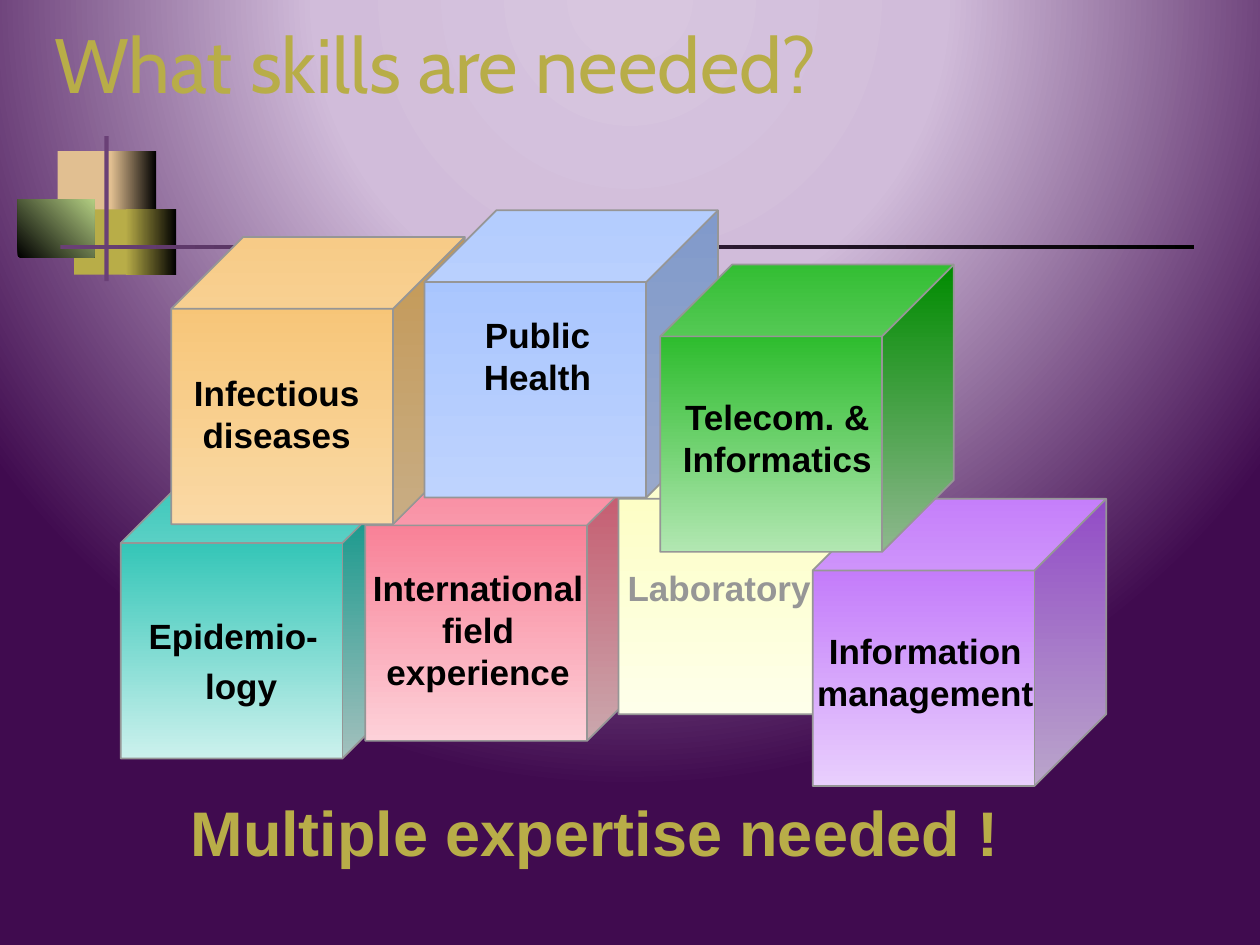
from pptx import Presentation
from pptx.dml.color import RGBColor
from pptx.enum.shapes import MSO_SHAPE
from pptx.enum.text import MSO_ANCHOR, PP_ALIGN
from pptx.oxml import parse_xml
from pptx.oxml.ns import nsdecls
from pptx.util import Pt

BLACK = RGBColor(0x00, 0x00, 0x00)
GRAY = RGBColor(0x96, 0x96, 0x96)
GOLD = RGBColor(0xB8, 0xAD, 0x48)
TAN = RGBColor(0xE1, 0xBF, 0x91)
LEAF = RGBColor(0xB3, 0xCE, 0x82)
PLUM = RGBColor(0x6A, 0x40, 0x76)
TEAL = RGBColor(0x00, 0xB7, 0xA5), RGBColor(0xCC, 0xF1, 0xED)
ROSE = RGBColor(0xF7, 0x66, 0x81), RGBColor(0xFD, 0xD1, 0xD9)
AMBER = RGBColor(0xF6, 0xBF, 0x69), RGBColor(0xFA, 0xD9, 0xA5)
CREAM = RGBColor(0xFC, 0xFE, 0xB9), RGBColor(0xFE, 0xFF, 0xEA)
BLUE = RGBColor(0xA2, 0xC1, 0xFE), RGBColor(0xBE, 0xD3, 0xFE)
VIOLET = RGBColor(0xB7, 0x60, 0xF9), RGBColor(0xE9, 0xCF, 0xFD)
GREEN = RGBColor(0x00, 0xAE, 0x00), RGBColor(0xB2, 0xE7, 0xB2)
GLOW = [(0, "D8C6DF"), (40000, "D1BCDA"), (100000, "400B4F")]

CUBE_W, CUBE_H = 167.76, 164.16
CENTER = PP_ALIGN.CENTER
CUBES = [
    (69, 269.3, TEAL, ["Epidemio-", "logy"], (8.8, 78.5, 120, 60), BLACK),
    (208.8, 259.2, ROSE, ["International field experience"], (-16.6, 61.2, 162, 79), BLACK),
    (97.9, 135.4, AMBER, ["Infectious diseases"], (-5.8, 73.4, 132, 55), BLACK),
    (353.5, 244, CREAM, ["Laboratory"], (-11.5, 76.4, 138, 31), GRAY),
    (242.6, 120.2, BLUE, ["Public Health"], (-4.4, 55.5, 138, 55), BLACK),
    (464.4, 285, VIOLET, ["Information management"], (-16.6, 71.4, 162, 55), BLACK),
    (377.3, 151.2, GREEN, ["Telecom. & Informatics"], (-10.8, 71.3, 155.5, 55), BLACK),
]


def paint_back(slide):
    """Fill the background with a round glow from above."""
    stops = "".join(
        f'<a:gs pos="{pos}"><a:srgbClr val="{tone}"/></a:gs>' for pos, tone in GLOW
    )
    slide.element.cSld.insert(0, parse_xml(
        f'<p:bg {nsdecls("p", "a")}><p:bgPr><a:gradFill rotWithShape="1">'
        f'<a:gsLst>{stops}</a:gsLst><a:path path="circle">'
        '<a:fillToRect l="50000" t="-80000" r="50000" b="180000"/></a:path>'
        '</a:gradFill><a:effectLst/></p:bgPr></p:bg>'
    ))


def add_block(slide, kind, box, tones, angle=0):
    """Add a shape with a plain or two-tone fill and no outline."""
    shape = slide.shapes.add_shape(kind, *map(Pt, box))
    shape.shadow.inherit = False
    shape.line.fill.background()
    if len(tones) == 1:
        shape.fill.solid()
        shape.fill.fore_color.rgb = tones[0]
    else:
        shape.fill.gradient()
        shape.fill.gradient_angle = angle
        for stop, tone in zip(shape.fill.gradient_stops, tones):
            stop.color.rgb = tone
    return shape


def add_text(slide, box, lines, size, color, font="Arial", bold=True, align=CENTER):
    """Add a wrapped text box with one paragraph per line."""
    frame = slide.shapes.add_textbox(*map(Pt, box)).text_frame
    frame.word_wrap = True
    frame.text = "\n".join(lines)
    for para in frame.paragraphs:
        para.alignment = align
        para.font.name = font
        para.font.size = Pt(size)
        para.font.bold = bold
        para.font.color.rgb = color
    return frame


def add_emblem(slide, left, top):
    """Draw the overlapping squares and the crossing bars."""
    parts = [
        (23.0, 8.6, 34.6, 37.4, [TAN], 0),
        (53.3, 8.6, 25.9, 37.4, [TAN, BLACK], 0),
        (32.4, 41.8, 33.1, 37.4, [GOLD], 0),
        (61.9, 41.8, 28.8, 37.4, [GOLD, BLACK], 0),
        (0, 36, 43.9, 33.1, [BLACK, LEAF], 45),
        (49.7, 0, 2.4, 82.8, [PLUM], 0),
        (24.5, 62.2, 648, 2.5, [PLUM, BLACK], 0),
    ]
    for x, y, wide, high, tones, angle in parts:
        box = left + x, top + y, wide, high
        add_block(slide, MSO_SHAPE.RECTANGLE, box, tones, angle)


def add_title(slide, box):
    """Place the heading."""
    frame = add_text(slide, box, ["What skills are needed?"], 44, GOLD,
                     "Cabin", False, PP_ALIGN.LEFT)
    frame.vertical_anchor = MSO_ANCHOR.MIDDLE


def add_cube(slide, left, top, tones, lines, label, color):
    """Draw a cube with its label set relative to its corner."""
    cube = add_block(slide, MSO_SHAPE.CUBE, (left, top, CUBE_W, CUBE_H), tones, 270)
    cube.line.color.rgb = GRAY
    cube.line.width = Pt(1)
    x, y, wide, high = label
    frame = add_text(slide, (left + x, top + y, wide, high), lines, 20, color)
    if len(lines) > 1:
        first, last = frame.paragraphs
        first.alignment = PP_ALIGN.LEFT
        last.line_spacing = 0.7
        last.space_before = Pt(11)


def main():
    """Build and save the slide."""
    deck = Presentation()
    deck.slide_width, deck.slide_height = Pt(720), Pt(540)
    slide = deck.slides.add_slide(deck.slide_layouts[6])
    paint_back(slide)
    add_emblem(slide, 10, 77.8)
    add_title(slide, (23.8, 5.8, 666, 59.8))
    add_text(slide, (52, 450, 576, 50.4), ["Multiple expertise needed !"], 36, GOLD)
    for cube in CUBES:
        add_cube(slide, *cube)
    deck.save("out.pptx")


if __name__ == "__main__":
    main()
